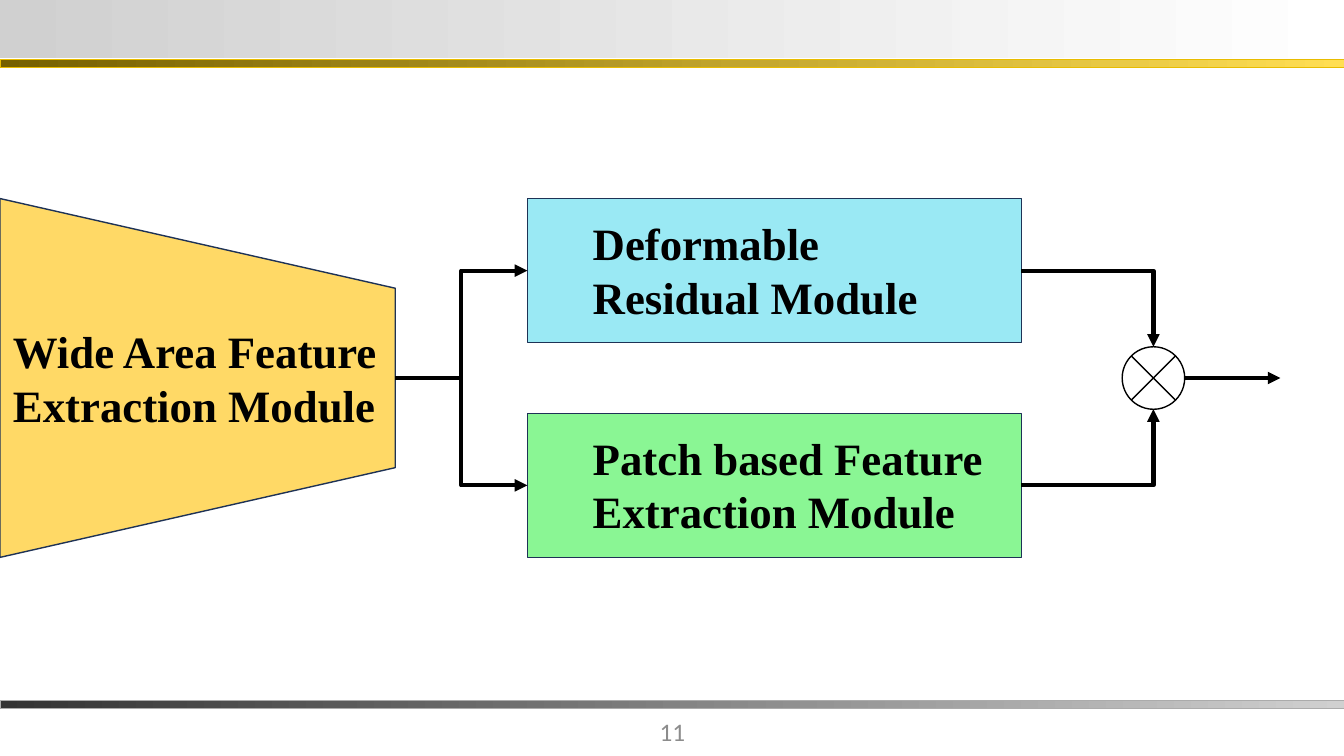
from lxml.etree import SubElement
from pptx import Presentation
from pptx.dml.color import RGBColor
from pptx.enum.shapes import MSO_CONNECTOR, MSO_SHAPE
from pptx.enum.text import MSO_ANCHOR, PP_ALIGN
from pptx.oxml.ns import qn
from pptx.util import Pt

PX = 9144  # 100 px to the inch
SLIDE_WIDTH, SLIDE_HEIGHT = 1333, 750
MODULE_WIDTH, MODULE_HEIGHT = 490, 143
OUTLINE = "1E3256"
BLACK = "000000"


def px(*lengths):
    return [round(length * PX) for length in lengths]


def color(value):
    return RGBColor.from_string(value)


def add_block(slide, kind, box, fill=None, line=None, line_width=1):
    shape = slide.shapes.add_shape(kind, *px(*box))
    shape.shadow.inherit = False
    if fill:
        shape.fill.solid()
        shape.fill.fore_color.rgb = color(fill)
    else:
        shape.fill.background()
    if line:
        shape.line.color.rgb = color(line)
        shape.line.width = Pt(line_width)
    else:
        shape.line.fill.background()
    return shape


def add_gradient_bar(slide, top, height, start, end, line=None):
    bar = add_block(slide, MSO_SHAPE.RECTANGLE, (0, top, SLIDE_WIDTH, height), line=line, line_width=0.25)
    bar.fill.gradient()
    bar.fill.gradient_angle = 0
    for stop, value in zip(bar.fill.gradient_stops, (start, end)):
        stop.color.rgb = color(value)


def add_label(slide, box, text, size=32, font="Times New Roman", value=BLACK, bold=True):
    text_frame = slide.shapes.add_textbox(*px(*box)).text_frame
    text_frame.word_wrap = True
    text_frame.text = text
    paragraph = text_frame.paragraphs[0]
    paragraph.font.size = Pt(size)
    paragraph.font.name = font
    paragraph.font.bold = bold
    paragraph.font.color.rgb = color(value)
    return text_frame


def add_arrow(slide, start, end, kind=MSO_CONNECTOR.ELBOW, preset=None):
    arrow = slide.shapes.add_connector(kind, *px(*start, *end))
    arrow.line.color.rgb = color(BLACK)
    arrow.line.width = Pt(3)
    SubElement(arrow.line._get_or_add_ln(), qn("a:tailEnd"), type="triangle")
    properties = arrow._element.spPr
    SubElement(properties, qn("a:effectLst"))
    if preset:
        properties.find(qn("a:prstGeom")).set("prst", preset)


def add_frame(slide, page_number):
    """Draw the header, the footer and the page number."""
    add_gradient_bar(slide, 0, 58, "D0D0D0", "FFFFFF")
    add_gradient_bar(slide, 695, 8, "333333", "D0D0D0", "ABABAB")
    add_gradient_bar(slide, 59, 8, "766000", "FFDE53", "E8BC00")
    text_frame = add_label(slide, (517, 706, 300, 40), page_number, 18, "Calibri", "8C8C8C", False)
    text_frame.vertical_anchor = MSO_ANCHOR.MIDDLE
    text_frame.paragraphs[0].alignment = PP_ALIGN.CENTER


def add_wide_area_module(slide, left, top, width, height):
    # The trapezoid is turned a quarter, so its unrotated box has the sides swapped.
    box = (left + (width - height) / 2, top + (height - width) / 2, height, width)
    trapezoid = add_block(slide, MSO_SHAPE.TRAPEZOID, box, "FFD966", OUTLINE)
    trapezoid.rotation = 90
    add_label(slide, (left + 3, top + 119, 381, 118), "Wide Area Feature Extraction Module")


def add_module(slide, left, top, text, fill, label_width):
    add_block(slide, MSO_SHAPE.RECTANGLE, (left, top, MODULE_WIDTH, MODULE_HEIGHT), fill, OUTLINE)
    add_label(slide, (left + 55, top + 12, label_width, 118), text)


def add_diagram(slide, left, top, width, height):
    trapezoid_width, gap, radius = 392, 131, 31
    middle = top + height / 2
    module_left = left + trapezoid_width + gap
    module_right = module_left + MODULE_WIDTH
    junction_x = module_right + gap

    add_wide_area_module(slide, left, top, trapezoid_width, height)
    modules = [
        (top, "Deformable Residual Module", "9AE9F4", 381, middle - radius),
        (top + height - MODULE_HEIGHT, "Patch based Feature Extraction Module", "8AF694", 415, middle + radius),
    ]
    for module_top, text, fill, label_width, junction_y in modules:
        center = module_top + MODULE_HEIGHT / 2
        add_module(slide, module_left, module_top, text, fill, label_width)
        add_arrow(slide, (left + trapezoid_width, middle), (module_left, center))
        add_arrow(slide, (module_right, center), (junction_x, junction_y), preset="bentConnector2")

    junction_box = (junction_x - radius, middle - radius, 2 * radius, 2 * radius)
    add_block(slide, MSO_SHAPE.FLOWCHART_SUMMING_JUNCTION, junction_box, line=BLACK)
    add_arrow(slide, (junction_x + radius, middle), (left + width, middle), MSO_CONNECTOR.STRAIGHT)


def main():
    presentation = Presentation()
    presentation.slide_width, presentation.slide_height = px(SLIDE_WIDTH, SLIDE_HEIGHT)
    slide = presentation.slides.add_slide(presentation.slide_layouts[6])
    add_frame(slide, "11")
    add_diagram(slide, 0, 197, 1270, 356)
    presentation.save("out.pptx")


if __name__ == "__main__":
    main()
